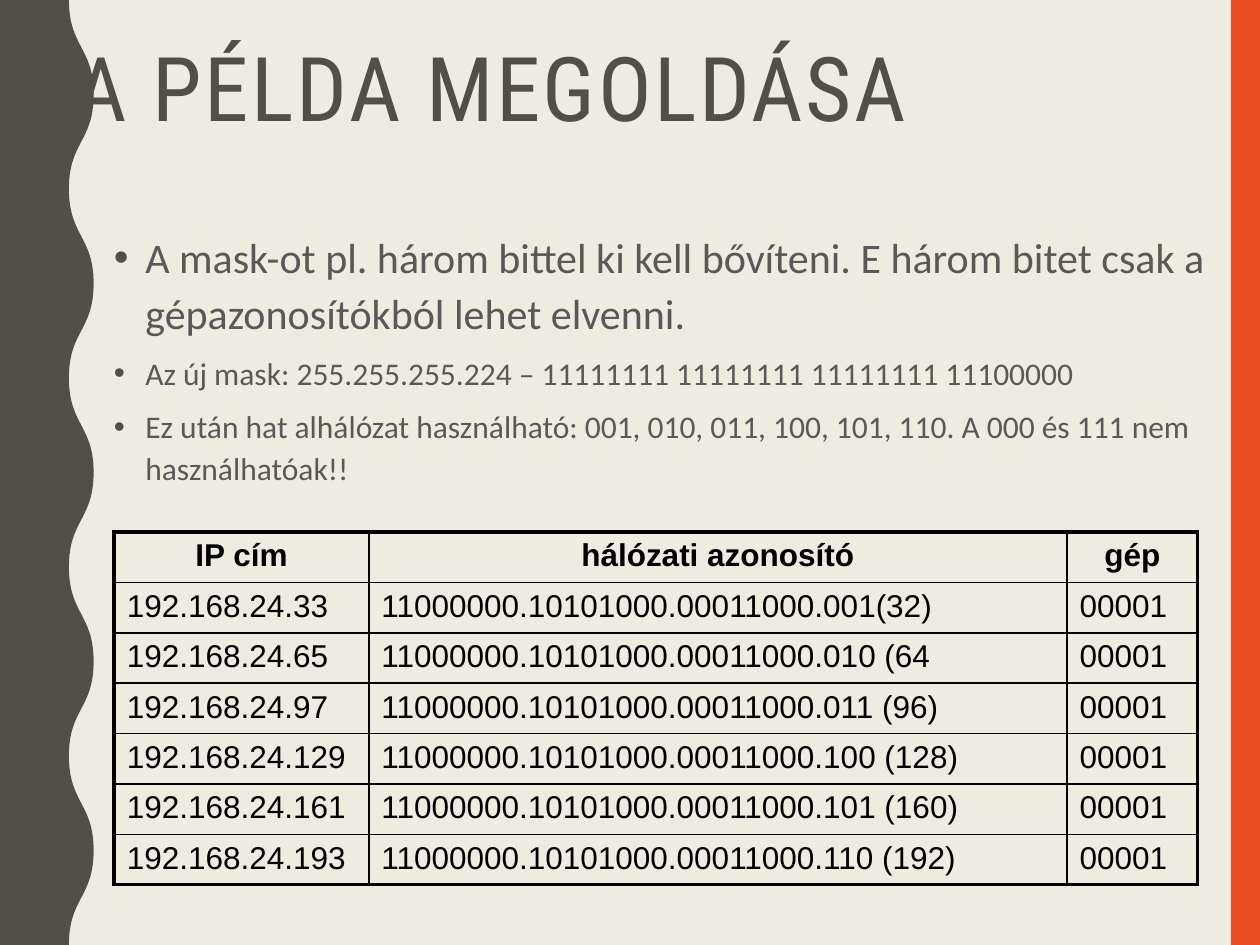
"""Build the slide that solves the subnet mask example with a table of addresses."""
from lxml import etree
from pptx import Presentation
from pptx.dml.color import RGBColor
from pptx.enum.shapes import MSO_SHAPE
from pptx.enum.text import MSO_ANCHOR, MSO_AUTO_SIZE, PP_ALIGN
from pptx.oxml.ns import qn
from pptx.util import Pt

RECTANGLE = MSO_SHAPE.RECTANGLE
TOP = MSO_ANCHOR.TOP
NO_FIT = MSO_AUTO_SIZE.NONE
LEFT, CENTER = PP_ALIGN.LEFT, PP_ALIGN.CENTER

OLIVE, ORANGE, CREAM, GREY, BLACK = "505046", "E84C22", "EEECE1", "595959", "000000"


def paint(fill, colour):
    fill.solid()
    fill.fore_color.rgb = RGBColor.from_string(colour)


def assign(target, values):
    for attribute, value in values.items():
        setattr(target, attribute, value)


prs = Presentation()
assign(prs, {"slide_width": Pt(720), "slide_height": Pt(540)})
slide = prs.slides.add_slide(prs.slide_layouts[5])
paint(slide.background.fill, CREAM)

stripe = slide.shapes.add_shape(RECTANGLE, Pt(703.4), 0, Pt(16.6), Pt(540))

trough, crest, half_wave = Pt(39.4), Pt(53.5), Pt(54)
turns = [(crest if n % 2 else trough, n * half_wave) for n in range(11)]
outline = slide.shapes.build_freeform(*turns[0], scale=1.0)
outline.add_line_segments(turns[1:] + [(0, Pt(540)), (0, 0)], close=True)
wavy_band = outline.convert_to_shape()
segments = list(wavy_band.element.iter(qn("a:lnTo")))
for segment, (x1, y1), (x2, y2) in zip(segments, turns, turns[1:]):
    segment.tag = qn("a:cubicBezTo")
    middle = (y1 + y2) // 2
    for position, x in enumerate((x1, x2)):
        segment.insert(position, etree.Element(qn("a:pt"), x=str(x), y=str(middle)))

for decoration, colour in ((stripe, ORANGE), (wavy_band, OLIVE)):
    paint(decoration.fill, colour)
    decoration.line.fill.background()
    decoration.shadow.inherit = False

title = slide.shapes.title
title.element.getparent().append(title.element)
assign(title, {"left": Pt(36), "top": Pt(21.6), "width": Pt(648), "height": Pt(90)})
assign(title.text_frame, {"text": "A PÉLDA MEGOLDÁSA", "vertical_anchor": TOP,
                          "word_wrap": True, "auto_size": NO_FIT})
heading = title.text_frame.paragraphs[0]
assign(heading, {"alignment": LEFT, "line_spacing": 0.9})
heading_run = heading.runs[0]
assign(heading_run.font, {"name": "Roboto Condensed", "size": Pt(51)})
paint(heading_run.font.fill, OLIVE)
heading_run._r.get_or_add_rPr().set("spc", "150")

explanation = slide.shapes.add_textbox(Pt(58), Pt(126), Pt(648), Pt(217.4)).text_frame
assign(explanation, {"word_wrap": True, "auto_size": NO_FIT, "vertical_anchor": TOP})
points = [
    ("A mask-ot pl. három bittel ki kell bővíteni. "
     "E három bitet csak a gépazonosítókból lehet elvenni.", 24),
    ("Az új mask: 255.255.255.224 – 11111111 11111111 11111111 11100000", 18),
    ("Ez után hat alhálózat használható: 001, 010, 011, 100, 101, 110. "
     "A 000 és 111 nem használhatóak!!", 18),
]
for number, (sentence, size) in enumerate(points):
    point = explanation.add_paragraph() if number else explanation.paragraphs[0]
    assign(point, {"line_spacing": 1.1, "space_before": Pt(7), "alignment": LEFT})
    run = point.add_run()
    run.text = sentence
    assign(run.font, {"name": "Calibri", "size": Pt(size)})
    paint(run.font.fill, GREY)
    properties = point._p.get_or_add_pPr()
    properties.set("marL", str(Pt(18)))
    properties.set("indent", str(Pt(-18)))
    bullet_colour = etree.SubElement(properties, qn("a:buClr"))
    etree.SubElement(bullet_colour, qn("a:srgbClr"), val=OLIVE)
    etree.SubElement(properties, qn("a:buFont"), typeface="Arial")
    etree.SubElement(properties, qn("a:buChar"), char="•")

subnets = [("001(32)", 33), ("010 (64", 65), ("011 (96)", 97),
           ("100 (128)", 129), ("101 (160)", 161), ("110 (192)", 193)]
rows = [("IP cím", "hálózati azonosító", "gép")]
for subnet, host in subnets:
    rows.append((f"192.168.24.{host}", f"11000000.10101000.00011000.{subnet}", "00001"))
widths = (145.5, 399, 74.7)
last_row, last_column = len(rows) - 1, len(widths) - 1

addresses = slide.shapes.add_table(len(rows), len(widths), Pt(65.25), Pt(304),
                                   Pt(sum(widths)), Pt(28.8 * len(rows))).table
assign(addresses, {"first_row": False, "horz_banding": False})
for column, width in zip(addresses.columns, widths):
    column.width = Pt(width)
for r, row in enumerate(rows):
    addresses.rows[r].height = Pt(28.8)
    for c, entry in enumerate(row):
        cell = addresses.cell(r, c)
        assign(cell, {"text": entry, "vertical_anchor": TOP})
        paragraph = cell.text_frame.paragraphs[0]
        paragraph.alignment = LEFT if r else CENTER
        font = paragraph.runs[0].font
        assign(font, {"name": "Arial", "size": Pt(18), "bold": r == 0})
        paint(font.fill, BLACK)
        cell_properties = cell._tc.get_or_add_tcPr()
        outer_sides = {"lnL": c == 0, "lnR": c == last_column,
                       "lnT": r == 0, "lnB": r == last_row}
        for side, outer in outer_sides.items():
            border = etree.SubElement(cell_properties, qn(f"a:{side}"),
                                      w=str(Pt(2.25 if outer else 1)))
            border_fill = etree.SubElement(border, qn("a:solidFill"))
            etree.SubElement(border_fill, qn("a:srgbClr"), val=BLACK)
        cell.fill.background()

prs.save("out.pptx")
